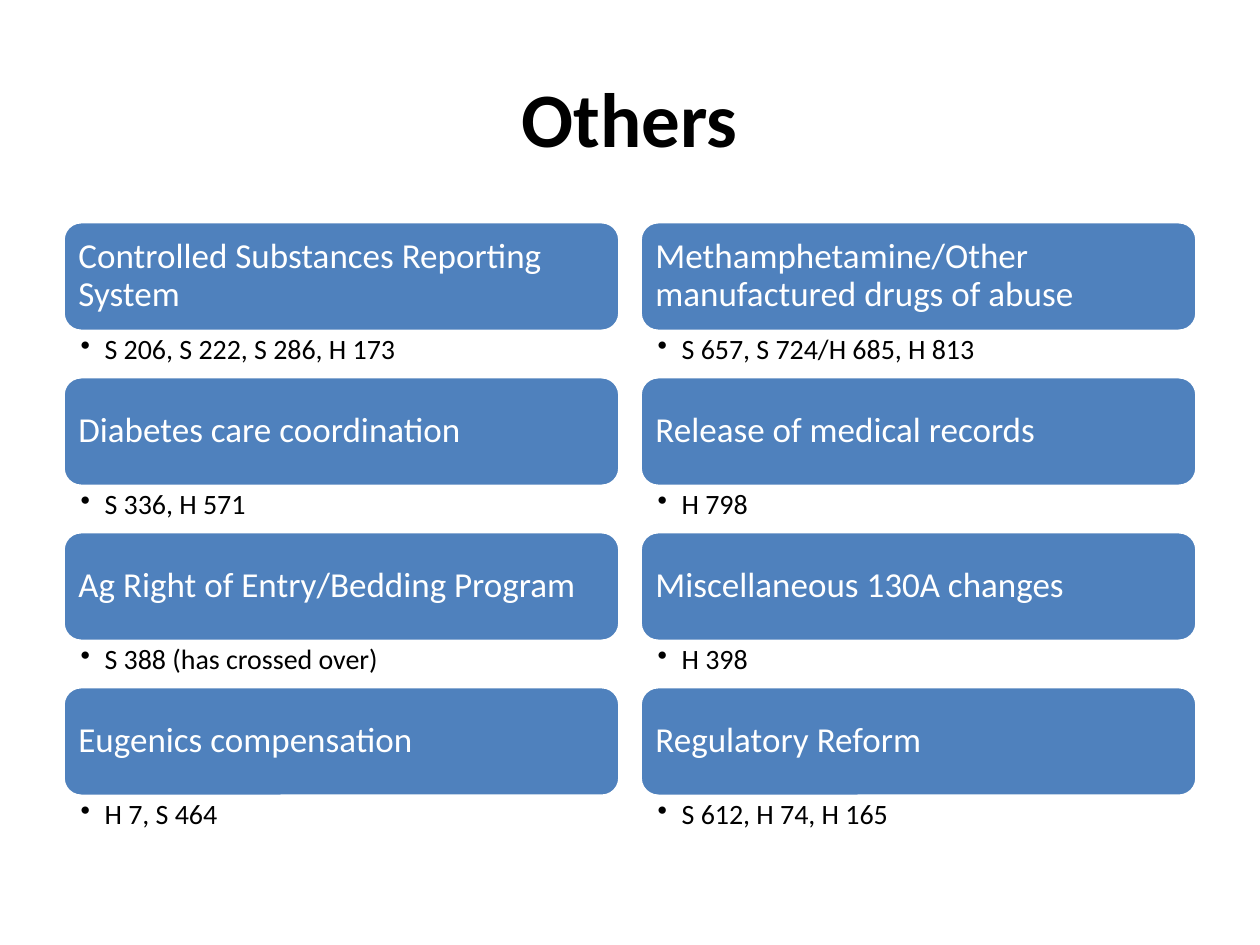
from pptx import Presentation
from pptx.dml.color import RGBColor
from pptx.enum.shapes import MSO_SHAPE
from pptx.enum.text import MSO_ANCHOR, PP_ALIGN
from pptx.oxml.ns import qn
from pptx.util import Inches, Pt
from lxml.etree import SubElement

COLORS = {"bar": "4F81BD", "light": "FFFFFF", "dark": "000000"}

TITLE = {"size": Pt(44), "bold": True}
TOPIC = {"size": Pt(20)}
BILLS = {"size": Pt(16)}

# Each column lists its topics with their bill numbers
COLUMNS = [
    [("Controlled Substances Reporting System", "S 206, S 222, S 286, H 173"),
     ("Diabetes care coordination", "S 336, H 571"),
     ("Ag Right of Entry/Bedding Program", "S 388 (has crossed over)"),
     ("Eugenics compensation", "H 7, S 464")],
    [("Methamphetamine/Other manufactured drugs of abuse",
      "S 657, S 724/H 685, H 813"),
     ("Release of medical records", "H 798"),
     ("Miscellaneous 130A changes", "H 398"),
     ("Regulatory Reform", "S 612, H 74, H 165")],
]

LEFT, TOP = 0.5, 1.76
COL_W, COL_STEP = 4.42, 4.58
BAR_H, BILLS_H = 0.87, 0.36
ROW_STEP = 1.23


class SlideBuilder:
    def __init__(self, slide, font="Calibri"):
        self.s = slide
        self.font = font

    def add_text(self, sp, text, fmt, color, margins, anchor, align=PP_ALIGN.LEFT):
        tf = sp.text_frame
        tf.word_wrap = True
        tf.vertical_anchor = anchor
        for side, value in zip(("left", "top", "right", "bottom"), margins):
            setattr(tf, f"margin_{side}", Inches(value))
        p = tf.paragraphs[0]
        p.alignment = align
        r = p.add_run()
        r.text = text
        for name, value in {"name": self.font, **fmt}.items():
            setattr(r.font, name, value)
        r.font.color.rgb = RGBColor.from_string(COLORS[color])
        return p

    def textbox(self, x, y, w, h):
        return self.s.shapes.add_textbox(*map(Inches, (x, y, w, h)))

    def title(self, text, x, y, w, h):
        self.add_text(self.textbox(x, y, w, h), text, TITLE, "dark",
                      (0.1, 0.05, 0.1, 0.05), MSO_ANCHOR.MIDDLE, PP_ALIGN.CENTER)

    def topic(self, text, x, y, w, h):
        sp = self.s.shapes.add_shape(MSO_SHAPE.ROUNDED_RECTANGLE,
                                     *map(Inches, (x, y, w, h)))
        sp.shadow.inherit = False
        sp.fill.solid()
        sp.fill.fore_color.rgb = RGBColor.from_string(COLORS["bar"])
        sp.line.color.rgb = RGBColor.from_string(COLORS["light"])
        sp.line.width = Pt(2)
        p = self.add_text(sp, text, TOPIC, "light", (0.08,) * 4, MSO_ANCHOR.MIDDLE)
        p.line_spacing = 0.9

    def bills(self, text, x, y, w, h):
        p = self.add_text(self.textbox(x, y, w, h), text, BILLS, "dark",
                          (0.14, 0.03, 0.16, 0.03), MSO_ANCHOR.TOP)
        p.level = 1
        p.line_spacing = 0.9
        # Hanging bullet
        pPr = p._p.get_or_add_pPr()
        pPr.set("marL", str(Inches(0.19)))
        pPr.set("indent", str(Inches(-0.19)))
        SubElement(pPr, qn("a:buChar"), char="•")


def main():
    prs = Presentation()
    prs.slide_width, prs.slide_height = Inches(10), Inches(7.5)
    builder = SlideBuilder(prs.slides.add_slide(prs.slide_layouts[6]))

    builder.title("Others", 0.5, 0.3, 9, 1.25)

    # Two columns of topic bars with the bills beneath each
    for col, topics in enumerate(COLUMNS):
        x = LEFT + col * COL_STEP
        for row, (topic, bills) in enumerate(topics):
            y = TOP + row * ROW_STEP
            builder.topic(topic, x, y, COL_W, BAR_H)
            builder.bills(bills, x, y + BAR_H, COL_W, BILLS_H)

    prs.save("out.pptx")


if __name__ == "__main__":
    main()
